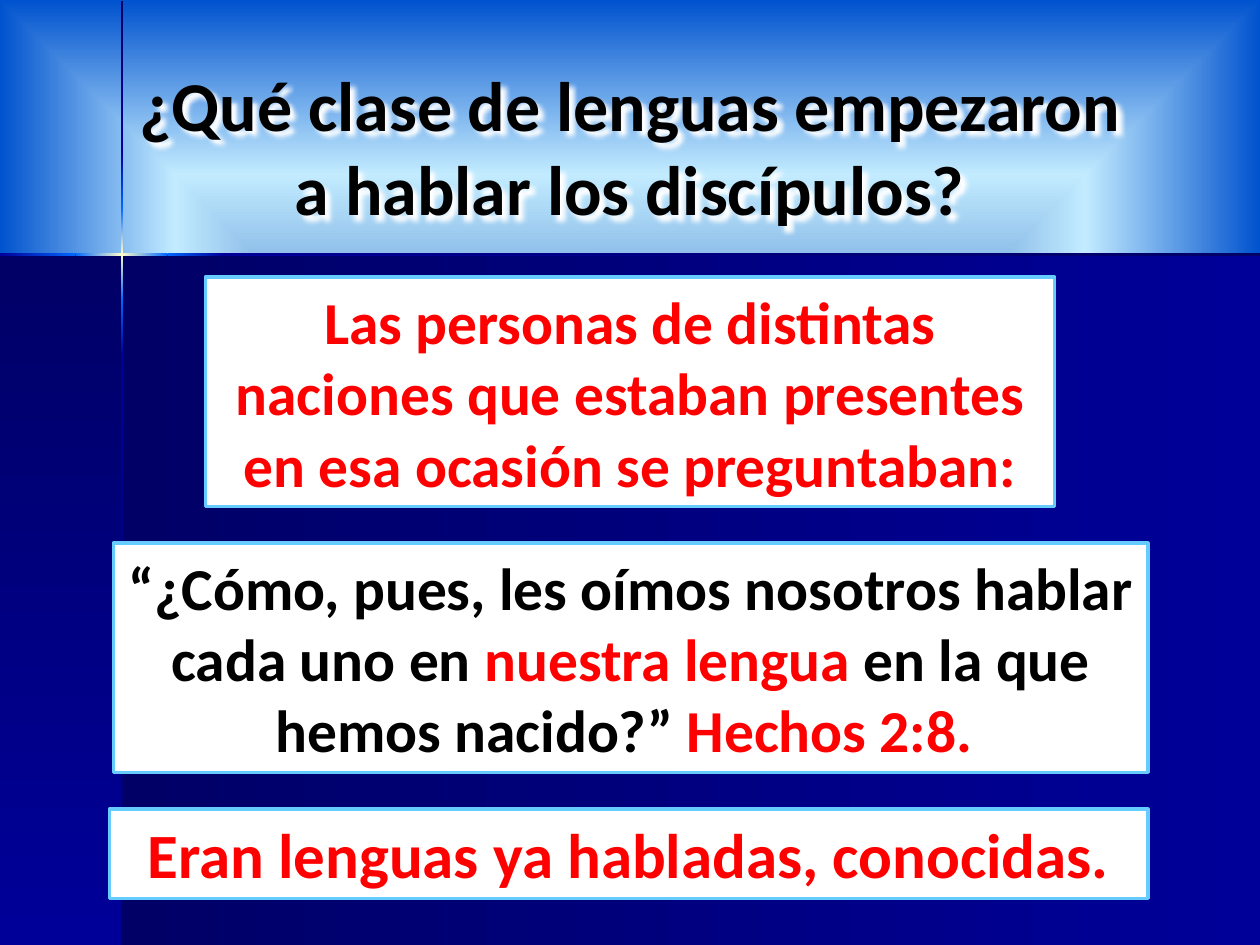
import itertools

import lxml.etree
import pptx
import pptx.dml.color
import pptx.enum.shapes
import pptx.enum.text
import pptx.oxml
import pptx.oxml.ns
import pptx.util

Cm = pptx.util.Cm
RGB = pptx.dml.color.RGBColor

BLACK = RGB(0x00, 0x00, 0x00)
WHITE = RGB(0xFF, 0xFF, 0xFF)
RED = RGB(0xFF, 0x00, 0x00)
SKY = RGB(0x66, 0xCC, 0xFF)
NAVY = RGB(0x00, 0x00, 0x66)
DEEP_BLUE = RGB(0x00, 0x00, 0x99)
BRIGHT_BLUE = RGB(0x00, 0x66, 0xFF)
CREAM = RGB(0xFF, 0xFF, 0xCC)
BACKDROP = [(0, RGB(0x00, 0x45, 0xAD)), (63, RGB(0xC2, 0xEB, 0xFF)),
            (100, RGB(0x00, 0x52, 0xCE))]

SLIDE_W, SLIDE_H = 25.4, 19.05
CROSS_X, CROSS_Y = 2.46, 5.13
RULE = 0.05
FONT = "Calibri"

FADE = [(NAVY, DEEP_BLUE), (DEEP_BLUE, BRIGHT_BLUE), (BRIGHT_BLUE, CREAM, BRIGHT_BLUE),
        (BRIGHT_BLUE, DEEP_BLUE), (DEEP_BLUE, NAVY)]


def set_gradient(fill, stops, angle=None):
    """Fill with (percent, colour) stops: linear at an angle, or from the centre."""
    fill.gradient()
    grad = fill._fill._gradFill
    for child in list(grad):
        grad.remove(child)
    listed = "".join(f'<a:gs pos="{pos * 1000}"><a:srgbClr val="{colour}"/></a:gs>'
                     for pos, colour in stops)
    if angle is None:
        course = ('<a:path path="shape"><a:fillToRect l="50000" t="50000" '
                  'r="50000" b="50000"/></a:path>')
    else:
        course = f'<a:lin ang="{angle * 60000}" scaled="0"/>'
    ns = pptx.oxml.ns.nsdecls("a")
    parts = pptx.oxml.parse_xml(
        f"<a:gradFill {ns}><a:gsLst>{listed}</a:gsLst>{course}</a:gradFill>")
    for child in list(parts):
        grad.append(child)


def add_box(slide, box):
    shape = slide.shapes.add_shape(
        pptx.enum.shapes.MSO_SHAPE.RECTANGLE, *(Cm(length) for length in box))
    shape.shadow.inherit = False
    return shape


def add_band(slide, box, colours, angle):
    band = add_box(slide, box)
    band.line.fill.background()
    step = 100 // (len(colours) - 1)
    set_gradient(band.fill, [(i * step, c) for i, c in enumerate(colours)], angle)


def add_text(paragraph, text, size=34, colour=BLACK, bold=True):
    run = paragraph.add_run()
    run.text = text
    run.font.name = FONT
    run.font.size = pptx.util.Pt(size)
    run.font.bold = bold
    run.font.color.rgb = colour


def fill_frame(frame, paragraphs, size):
    """Write centred paragraphs, each a list of (text, colour)."""
    frame.word_wrap = True
    frame.auto_size = pptx.enum.text.MSO_AUTO_SIZE.NONE
    frame.vertical_anchor = pptx.enum.text.MSO_ANCHOR.MIDDLE
    for index, pieces in enumerate(paragraphs):
        paragraph = frame.add_paragraph() if index else frame.paragraphs[0]
        paragraph.alignment = pptx.enum.text.PP_ALIGN.CENTER
        paragraph.space_before = pptx.util.Pt(0)
        paragraph.line_spacing = 1.0
        for text, colour in pieces:
            add_text(paragraph, text, size=size, colour=colour)


def add_backdrop(slide, box):
    """Blue panels below a glowing cross of thin rules."""
    left, top, width, height = box
    set_gradient(slide.background.fill, BACKDROP)
    below = height - CROSS_Y
    panel = (NAVY, DEEP_BLUE)
    add_band(slide, (left + CROSS_X, top + CROSS_Y, width - CROSS_X, below), panel, 0)
    add_band(slide, (left, top + CROSS_Y, CROSS_X, below), panel, 90)

    down = itertools.pairwise([0.03, 3.07, 4.19, 6.05, 7.16, height])
    for (start, end), colours in zip(down, FADE):
        add_band(slide, (left + CROSS_X - RULE / 2, top + start, RULE, end - start),
                 colours, 90)
    across = itertools.pairwise([0, 1.52, 3.38, 4.5, width])
    for (start, end), colours in zip(across, FADE[1:]):
        add_band(slide, (left + start, top + CROSS_Y - RULE / 2, end - start, RULE),
                 colours, 0)


def add_question(slide, box, text):
    """Place the title with a soft white shadow."""
    title = slide.shapes.title
    title.left, title.top, title.width, title.height = (Cm(length) for length in box)
    fill_frame(title.text_frame, [[(text, BLACK)]], 40)
    title._element.spPr.append(pptx.oxml.parse_xml(
        f'<a:effectLst {pptx.oxml.ns.nsdecls("a")}>'
        '<a:outerShdw blurRad="38100" dist="38100" dir="2700000" algn="tl">'
        '<a:srgbClr val="FFFFFF"/></a:outerShdw></a:effectLst>'))


def add_answer(slide, box, paragraphs, size=34):
    answer = add_box(slide, box)
    answer.fill.solid()
    answer.fill.fore_color.rgb = WHITE
    answer.line.color.rgb = SKY
    answer.line.width = pptx.util.Pt(2)
    fill_frame(answer.text_frame, paragraphs, size)


def main():
    deck = pptx.Presentation()
    deck.slide_width, deck.slide_height = Cm(SLIDE_W), Cm(SLIDE_H)
    slide = deck.slides.add_slide(deck.slide_layouts[5])

    add_backdrop(slide, (0, 0, SLIDE_W, SLIDE_H))
    title = slide.shapes.title._element
    title.getparent().append(title)  # bring the title in front of the backdrop
    add_question(slide, (2.13, 1.09, 21.13, 3.68),
                 "¿Qué clase de lenguas empezaron a hablar los discípulos?")
    add_answer(slide, (4.14, 5.59, 17.12, 4.62), [
        [("Las personas de distintas naciones que estaban presentes "
          "en esa ocasión se preguntaban:", RED)]])
    add_answer(slide, (2.29, 10.95, 20.85, 4.62), [
        [("“¿Cómo, pues, les oímos nosotros hablar cada uno en ", BLACK),
         ("nuestra lengua ", RED), ("en la que", BLACK)],
        [("hemos nacido?” ", BLACK), ("Hechos 2:8. ", RED)]])
    add_answer(slide, (2.21, 16.31, 20.93, 1.8),
               [[("Eran lenguas ya habladas, conocidas.", RED)]], size=36)
    deck.save("out.pptx")


if __name__ == "__main__":
    main()
